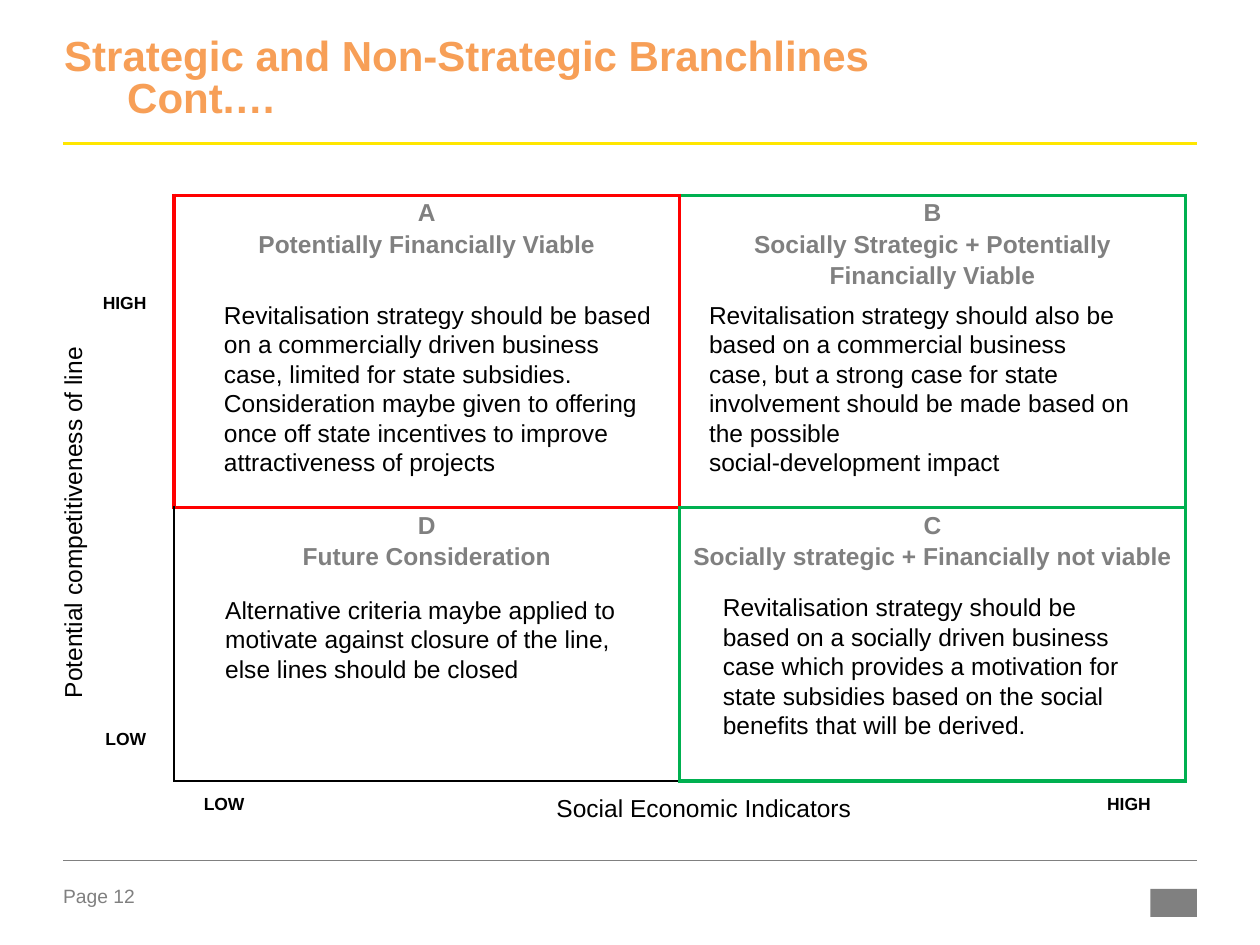
import pptx
import pptx.util
import pptx.dml.color
import pptx.enum.shapes
import pptx.enum.text
import pptx.oxml
import pptx.oxml.ns
from dataclasses import dataclass
from lxml import etree

Pt = pptx.util.Pt
ALIGN = pptx.enum.text.PP_ALIGN
qn = pptx.oxml.ns.qn


@dataclass(frozen=True)
class Theme:
    font: str = "Arial"
    title: str = "F79F57"
    grey: str = "808080"
    black: str = "000000"
    white: str = "FFFFFF"
    yellow: str = "FFE600"
    red: str = "FF0000"
    green: str = "00B050"
    title_size: float = 24
    body_size: float = 14
    page_size: float = 11
    scale_size: float = 10


T = Theme()
RED, GREEN, BLACK = (T.red, 2.25), (T.green, 2.25), (T.black, 1)

# Heading lines, body lines, body box (dx, dy, w, h) in its cell, borders L R T B
QUADRANTS = [
    [(["A", "Potentially Financially Viable"],
      ["Revitalisation strategy should be based on a commercially driven business "
       "case, limited for state subsidies. Consideration maybe given to offering "
       "once off state incentives to improve attractiveness of projects"],
      (21.5, 56.3, 258.5, 109.5), (RED, RED, RED, RED)),
     (["B", "Socially Strategic + Potentially Financially Viable"],
      ["Revitalisation strategy should also be based on a commercial business case, "
       "but a strong case for state involvement should be made based on the possible",
       "social-development impact"],
      (9.7, 56.3, 255, 109.5), (RED, GREEN, GREEN, GREEN))],
    [(["D", "Future Consideration"],
      ["Alternative criteria maybe applied to motivate against closure of the line, "
       "else lines should be closed"],
      (22.2, 46.2, 258, 58.5), (BLACK, GREEN, RED, BLACK)),
     (["C", "Socially strategic + Financially not viable"],
      ["Revitalisation strategy should be based on a socially driven business case "
       "which provides a motivation for state subsidies based on the social benefits "
       "that will be derived."],
      (17.6, 44.8, 258, 92), (GREEN, GREEN, GREEN, GREEN))],
]


def rgb(value):
    return pptx.dml.color.RGBColor.from_string(value)


def write(tf, lines, size, color, bold=False, align=ALIGN.LEFT, spacing=None):
    tf.text = "\n".join(lines)
    for p in tf.paragraphs:
        p.alignment = align
        if spacing:
            p.line_spacing = spacing
        for r in p.runs:
            r.font.name, r.font.size, r.font.bold = T.font, Pt(size), bold
            r.font.color.rgb = rgb(color)


def add_text(s, box, lines, size, color=T.black, bold=False, wrap=True, inset=(7.2, 3.6)):
    sp = s.shapes.add_textbox(*map(Pt, box))
    tf = sp.text_frame
    tf.word_wrap = wrap
    tf.margin_left = tf.margin_right = Pt(inset[0])
    tf.margin_top = tf.margin_bottom = Pt(inset[1])
    write(tf, lines, size, color, bold)
    return sp


def add_rule(s, x, y, w, color, width):
    line = s.shapes.add_connector(
        pptx.enum.shapes.MSO_CONNECTOR.STRAIGHT, Pt(x), Pt(y), Pt(x + w), Pt(y))
    line.line.color.rgb = rgb(color)
    line.line.width = Pt(width)
    etree.SubElement(line._element.spPr, qn("a:effectLst"))


def set_borders(cell, borders):
    tcPr = cell._tc.get_or_add_tcPr()
    for i, (side, (color, width)) in enumerate(zip("LRTB", borders)):
        ln = etree.Element(qn(f"a:ln{side}"), w=str(int(Pt(width))))
        fill = etree.SubElement(ln, qn("a:solidFill"))
        etree.SubElement(fill, qn("a:srgbClr"), val=color)
        tcPr.insert(i, ln)


def add_header(s, x, y, w, h):
    title = s.shapes.title
    title.left, title.top, title.width, title.height = Pt(x + 0.7), Pt(y), Pt(548), Pt(67.7)
    tf = title.text_frame
    tf.margin_left = tf.margin_right = tf.margin_top = tf.margin_bottom = 0
    tf.vertical_anchor = pptx.enum.text.MSO_ANCHOR.TOP
    tf.word_wrap = True
    tf.auto_size = pptx.enum.text.MSO_AUTO_SIZE.NONE
    write(tf, ["Strategic and Non-Strategic Branchlines Cont.…"],
          T.title_size, T.title, bold=True, spacing=0.85)
    pPr = tf.paragraphs[0]._p.get_or_add_pPr()
    pPr.set("marL", str(int(Pt(36))))
    pPr.set("indent", str(int(Pt(-36))))
    add_rule(s, x, y + h, w, T.yellow, 1.5)


def add_matrix(s, x, y, w, h):
    # Headings and borders
    row_heights = (178.5, h - 178.5)
    col_width = w / 2
    table = s.shapes.add_table(2, 2, Pt(x), Pt(y), Pt(w), Pt(h)).table
    table.first_row = table.horz_banding = False
    for col in table.columns:
        col.width = Pt(col_width)
    for row, height in zip(table.rows, row_heights):
        row.height = Pt(height)
    for i, quadrants in enumerate(QUADRANTS):
        for j, (heading, body, (dx, dy, bw, bh), borders) in enumerate(quadrants):
            cell = table.cell(i, j)
            cell.margin_left = cell.margin_right = Pt(5)
            cell.margin_top = cell.margin_bottom = 0
            cell.fill.solid()
            cell.fill.fore_color.rgb = rgb(T.white)
            set_borders(cell, borders)
            write(cell.text_frame, heading, T.body_size, T.grey, True, ALIGN.CENTER, 1.15)
            # Strategy text over the cell
            left, top = x + j * col_width + dx, y + sum(row_heights[:i]) + dy
            add_text(s, (left, top, bw, bh), body, T.body_size)


def add_axes(s, x, y, w, h):
    # Axis names
    sp = add_text(s, (x - 70, y + 72, 31.7, 222.5),
                  ["Potential competitiveness of line"], T.body_size)
    sp.text_frame._txBody.bodyPr.set("vert", "vert270")
    add_text(s, (x + 211.5, y + h + 3.5, 183.6, 24.5),
             ["Social Economic Indicators"], T.body_size, wrap=False)
    # Scale ends
    for label, dx, dy in (("HIGH", -47.7, 52), ("LOW", -46.2, 301),
                          ("LOW", 10, h + 3.5), ("HIGH", 526.2, h + 3.5)):
        add_text(s, (x + dx, y + dy, 45, 19.4), [label], T.scale_size, bold=True, wrap=False)


def add_footer(s, x, y, w, h):
    add_rule(s, x, y, w, T.grey, 0.25)
    add_text(s, (x, y + 13.7, 57, 16), ["Page 12"], T.page_size, T.grey, inset=(0, 0))
    # Plain mark at the right end
    mark = s.shapes.add_shape(pptx.enum.shapes.MSO_SHAPE.RECTANGLE,
                              Pt(x + w - 26.6), Pt(y + h - 16), Pt(26.6), Pt(16))
    mark.shadow.inherit = False
    mark.fill.solid()
    mark.fill.fore_color.rgb = rgb(T.grey)
    mark.line.fill.background()


def main():
    prs = pptx.Presentation()
    prs.slide_width, prs.slide_height = Pt(720), Pt(540)
    s = prs.slides.add_slide(prs.slide_layouts[5])
    matrix = (99.4, 111.6, 578, 334.8)
    add_header(s, 36, 21, 648, 61)
    add_matrix(s, *matrix)
    add_axes(s, *matrix)
    add_footer(s, 36, 491.5, 648, 32.5)
    prs.save("out.pptx")


if __name__ == "__main__":
    main()
